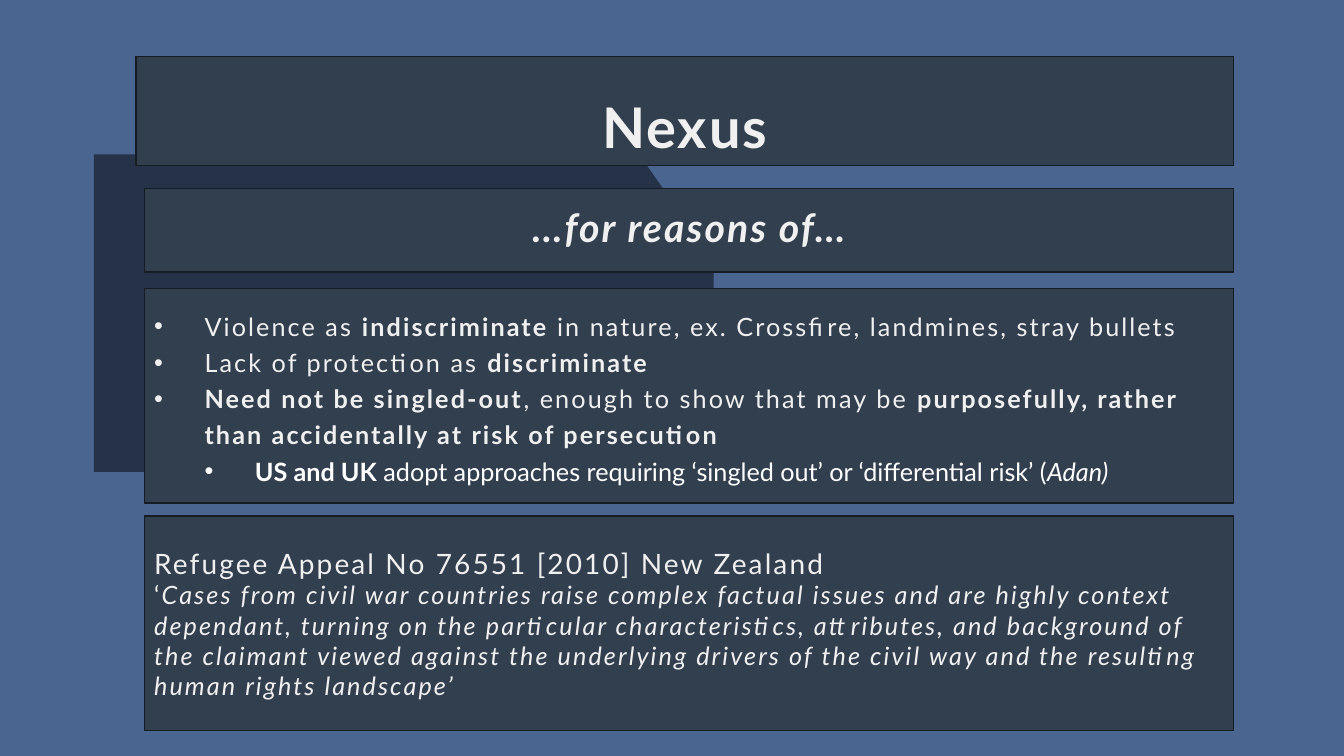
from lxml import etree
from pptx import Presentation
from pptx.dml.color import RGBColor
from pptx.enum.shapes import MSO_SHAPE
from pptx.enum.text import MSO_ANCHOR, PP_ALIGN
from pptx.oxml.ns import qn
from pptx.util import Pt

RECT = MSO_SHAPE.RECTANGLE
MID, LOW = MSO_ANCHOR.MIDDLE, MSO_ANCHOR.BOTTOM
LEFT, MIDST = PP_ALIGN.LEFT, PP_ALIGN.CENTER

HUES = {"back": "4A6590", "deep": "253248", "box": "323F4F",
        "edge": "161C23", "text": "F1F0F0", "white": "FFFFFF"}
FACE = "Lato"
RIGHT = 881.3
INDENT = 36

HEAD = [("Nexus", "b")]
REASON = [("…for reasons of…", "bi")]
POINTS = [
    [("Violence as ", ""), ("indiscriminate ", "b"),
     ("in nature, ex. Crossfire, landmines, stray bullets", "")],
    [("Lack of protection as ", ""), ("discriminate", "b")],
    [("Need not be singled-out", "b"), (", enough to show that may be ", ""),
     ("purposefully, rather than accidentally at risk of persecution", "b")],
]
SUB = [("US and UK", "b"),
       (" adopt approaches requiring ‘singled out’ or ‘differential risk’ (", ""),
       ("Adan)", "i")]
CASE = [("Refugee Appeal No 76551 [2010] New Zealand", "")]
QUOTE = [("‘", ""),
         ("Cases from civil war countries raise complex factual issues and are "
          "highly context dependant, turning on the particular characteristics, "
          "attributes, and background of the claimant viewed against the "
          "underlying drivers of the civil way and the resulting human rights "
          "landscape’", "i")]

CENTRED = {"align": MIDST, "lead": 0.9}
LIST = {"size": 18, "lead": 1.2}
BOXES = [
    (97.2, 40.3, 77.8, LOW, [(HEAD, {"size": 40, **CENTRED})]),
    (103, 134.6, 59.8, MID, [(REASON, {"size": 28, **CENTRED})]),
    (103, 205.9, 153.4, MID,
     [(runs, {"level": 1, **LIST}) for runs in POINTS]
     + [(SUB, {"level": 2, "hue": "white", "space": 0, **LIST})]),
    (103, 368.6, 153.4, MID, [(CASE, {"size": 20}), (QUOTE, {"size": 18})]),
]
SHADE = [(67, 110.2), (456.5, 110.2), (509.8, 186.5), (509.8, 337), (67, 337)]


def rgb(name):
    return RGBColor.from_string(HUES[name])


def write(para, runs, size=18, hue="text", space=1.5, align=LEFT,
          lead=1.0, level=0):
    para.alignment = align
    para.line_spacing = lead
    if level:
        para.level = level - 1
        props = para._p.get_or_add_pPr()
        props.set("marL", str(Pt(INDENT * level)))
        props.set("indent", str(-Pt(INDENT)))
        etree.SubElement(props, qn("a:buFont")).set("typeface", "Arial")
        etree.SubElement(props, qn("a:buChar")).set("char", "•")
    for text, style in runs:
        run = para.add_run()
        run.text = text
        font = run.font
        font.name, font.size = FACE, Pt(size)
        font.bold, font.italic = "b" in style, "i" in style
        font.color.rgb = rgb(hue)
        run._r.get_or_add_rPr().set("spc", str(int(space * 100)))


def add_box(slide, left, top, height, anchor, paras):
    box = slide.shapes.add_shape(
        RECT, Pt(left), Pt(top), Pt(RIGHT - left), Pt(height))
    box.shadow.inherit = False
    box.fill.solid()
    box.fill.fore_color.rgb = rgb("box")
    box.line.color.rgb = rgb("edge")
    box.line.width = Pt(1)
    frame = box.text_frame
    frame.word_wrap = True
    frame.vertical_anchor = anchor
    for spot, (runs, form) in enumerate(paras):
        para = frame.add_paragraph() if spot else frame.paragraphs[0]
        write(para, runs, **form)


def add_shade(slide):
    start, *rest = [(Pt(x), Pt(y)) for x, y in SHADE]
    pen = slide.shapes.build_freeform(*start)
    pen.add_line_segments(rest, close=True)
    shade = pen.convert_to_shape()
    shade.shadow.inherit = False
    shade.fill.solid()
    shade.fill.fore_color.rgb = rgb("deep")
    shade.line.fill.background()


def main():
    """Build the Nexus slide and save it."""
    deck = Presentation()
    deck.slide_width, deck.slide_height = Pt(960), Pt(540)
    slide = deck.slides.add_slide(deck.slide_layouts[6])
    slide.background.fill.solid()
    slide.background.fill.fore_color.rgb = rgb("back")
    add_shade(slide)
    for box in BOXES:
        add_box(slide, *box)
    deck.save("out.pptx")


if __name__ == "__main__":
    main()
